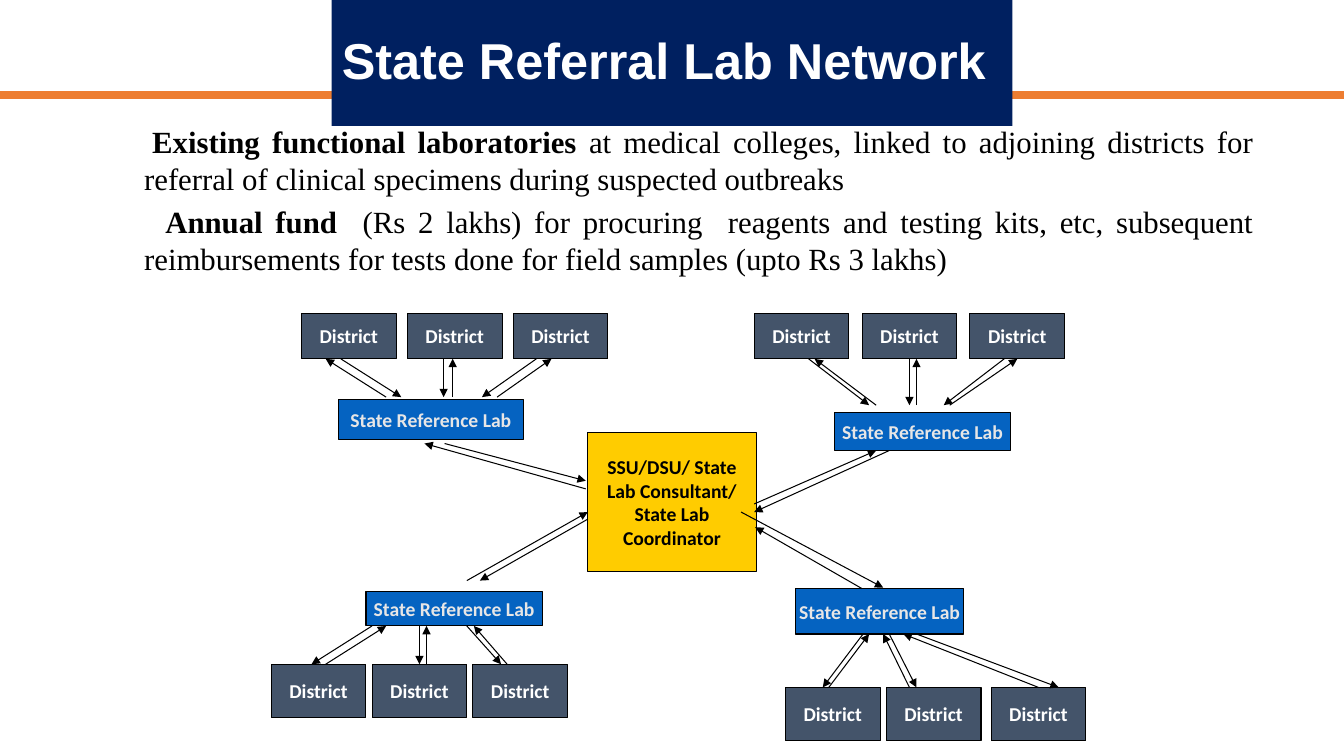
from dataclasses import dataclass

from lxml import etree
from pptx import Presentation
from pptx import util as u
from pptx.dml.color import RGBColor
from pptx.enum import shapes, text
from pptx.oxml import ns

PX = 9144  # EMU per px, 100 px to the inch
Box = tuple[int, int, int, int]
Links = tuple[tuple[int, int], ...]


@dataclass(frozen=True)
class Theme:
    navy: str = "002060"
    orange: str = "ED7D31"
    lab: str = "0563C1"
    lab_text: str = "E7E6E6"
    district: str = "44546A"
    hub: str = "FFCC00"
    black: str = "000000"
    white: str = "FFFFFF"
    title_size: int = 36
    body_size: int = 22
    label_size: int = 14
    outline: float = 0.75


@dataclass(frozen=True)
class Cluster:
    """A reference lab, its row of districts, and (district x, lab x) arrows."""
    lab: Box
    district_lefts: tuple[int, int, int]
    district_top: int
    district_height: int
    lab_edge: int
    to_lab: Links
    from_lab: Links

    @property
    def district_edge(self) -> int:
        above = self.district_top < self.lab[1]
        return self.district_top + (self.district_height if above else 0)


THEME = Theme()
DISTRICT_WIDTH = 94
HUB: Box = (583, 429, 167, 138)
CLUSTERS = (
    Cluster((336, 396, 183, 40), (299, 404, 509), 311, 45, 394,
            ((338, 398), (440, 440), (532, 478)),
            ((323, 383), (449, 449), (547, 493))),
    Cluster((828, 409, 174, 38), (748, 855, 962), 311, 45, 402,
            ((802, 862), (902, 902), (996, 936)),
            ((808, 869), (909, 909), (1009, 942))),
    Cluster((363, 587, 175, 34), (269, 369, 469), 659, 53, 621,
            ((323, 383), (423, 423), (503, 470)),
            ((309, 369), (416, 416), (497, 463))),
    Cluster((789, 584, 167, 45), (779, 879, 983), 682, 53, 629,
            ((822, 862), (902, 876), (1030, 896)),
            ((816, 856), (909, 882), (1050, 909))),
)
HUB_ARROWS = (
    (441, 440, 581, 477), (581, 485, 421, 440),
    (748, 500, 869, 447), (882, 447, 748, 508),
    (583, 515, 476, 576), (463, 576, 583, 508),
    (735, 508, 876, 583), (855, 584, 749, 523),
)
# First-line indent in px, bold lead, remaining text
POINTS = (
    (8, "Existing functional laboratories ",
     "at medical colleges, linked to adjoining districts for referral of "
     "clinical specimens during suspected outbreaks"),
    (21, "Annual fund  ",
     "(Rs 2 lakhs) for procuring  reagents and testing kits, etc, subsequent "
     "reimbursements for tests done for field samples (upto Rs 3 lakhs)"),
)


def rgb(colour: str) -> RGBColor:
    return RGBColor.from_string(colour)


def place(shape, box: Box) -> None:
    shape.left, shape.top, shape.width, shape.height = (n * PX for n in box)


def write(paragraph, words: str, *, size: int, font: str, colour: str,
          bold: bool = True, align=text.PP_ALIGN.CENTER) -> None:
    paragraph.alignment = align
    run = paragraph.add_run()
    run.text = words
    run.font.size, run.font.name, run.font.bold = u.Pt(size), font, bold
    run.font.color.rgb = rgb(colour)


def add_rect(slide, box: Box, fill: str, line: str, width: float):
    rect = slide.shapes.add_shape(shapes.MSO_SHAPE.RECTANGLE,
                                  *(n * PX for n in box))
    rect.shadow.inherit = False
    rect.fill.solid()
    rect.fill.fore_color.rgb = rgb(fill)
    rect.line.color.rgb = rgb(line)
    rect.line.width = u.Pt(width)
    return rect


def add_node(slide, sites: dict, box: Box, label: str, fill: str,
             colour: str, wrap: bool = False) -> None:
    """Draw a labelled box and record the middle of each of its sides."""
    node = add_rect(slide, box, fill, THEME.black, THEME.outline)
    node.text_frame.word_wrap = wrap
    node.text_frame.vertical_anchor = text.MSO_ANCHOR.MIDDLE
    write(node.text_frame.paragraphs[0], label, size=THEME.label_size,
          font="Calibri", colour=colour)
    x, y, w, h = box
    middles = ((x + w // 2, y), (x, y + h // 2),
               (x + w // 2, y + h), (x + w, y + h // 2))
    sites.update({spot: (node, side) for side, spot in enumerate(middles)})


def add_arrow(slide, sites: dict, x1: int, y1: int, x2: int, y2: int) -> None:
    arrow = slide.shapes.add_connector(
        shapes.MSO_CONNECTOR.STRAIGHT, *(n * PX for n in (x1, y1, x2, y2)))
    arrow.line.color.rgb = rgb(THEME.black)
    arrow.line.width = u.Pt(THEME.outline)
    props = arrow.element.spPr
    etree.SubElement(props.find(ns.qn("a:ln")), ns.qn("a:tailEnd"),
                     type="triangle")
    etree.SubElement(props, ns.qn("a:effectLst"))
    if (x1, y1) in sites:
        arrow.begin_connect(*sites[x1, y1])
    if (x2, y2) in sites:
        arrow.end_connect(*sites[x2, y2])


def add_heading(slide) -> None:
    band = add_rect(slide, (0, 91, 1333, 7), THEME.orange, THEME.orange, 1)
    band.element.getparent().insert(2, band.element)  # behind the title
    title = slide.shapes.title
    place(title, (329, 0, 675, 125))
    title.fill.solid()
    title.fill.fore_color.rgb = rgb(THEME.navy)
    frame = title.text_frame
    frame.auto_size = text.MSO_AUTO_SIZE.NONE
    frame.vertical_anchor = text.MSO_ANCHOR.MIDDLE
    frame.paragraphs[0].line_spacing = 0.9
    write(frame.paragraphs[0], "State Referral Lab Network",
          size=THEME.title_size, font="Arial", colour=THEME.white,
          align=text.PP_ALIGN.LEFT)


def add_points(slide) -> None:
    body = slide.placeholders[1]
    place(body, (93, 117, 1160, 246))
    frame = body.text_frame
    frame.auto_size = text.MSO_AUTO_SIZE.NONE
    for number, (indent, lead, rest) in enumerate(POINTS):
        point = frame.add_paragraph() if number else frame.paragraphs[0]
        point.space_before = u.Pt(4.4 if number else 0)
        point.line_spacing = u.Pt(26.4)
        for words, bold in ((lead, True), (rest, False)):
            write(point, words, size=THEME.body_size, font="Times New Roman",
                  colour=THEME.black, bold=bold, align=text.PP_ALIGN.JUSTIFY)
        props = point._p.get_or_add_pPr()
        props.set("marL", str(40 * PX))
        props.set("indent", str(indent * PX))
        etree.SubElement(props, ns.qn("a:buNone"))


def add_network(slide) -> None:
    sites: dict = {}
    add_node(slide, sites, HUB,
             "SSU/DSU/ State Lab Consultant/ State Lab Coordinator",
             THEME.hub, THEME.black, wrap=True)
    for cluster in CLUSTERS:
        add_node(slide, sites, cluster.lab, "State Reference Lab",
                 THEME.lab, THEME.lab_text)
        for left in cluster.district_lefts:
            add_node(slide, sites, (left, cluster.district_top, DISTRICT_WIDTH,
                                    cluster.district_height),
                     "District", THEME.district, THEME.white)
        near, far = cluster.lab_edge, cluster.district_edge
        for district_x, lab_x in cluster.to_lab:
            add_arrow(slide, sites, district_x, far, lab_x, near)
        for district_x, lab_x in cluster.from_lab:
            add_arrow(slide, sites, lab_x, near, district_x, far)
    for ends in HUB_ARROWS:
        add_arrow(slide, sites, *ends)


def main() -> None:
    deck = Presentation()
    deck.slide_width, deck.slide_height = 1333 * PX, 750 * PX
    slide = deck.slides.add_slide(deck.slide_layouts[1])
    add_heading(slide)
    add_points(slide)
    add_network(slide)
    deck.save("out.pptx")


if __name__ == "__main__":
    main()
